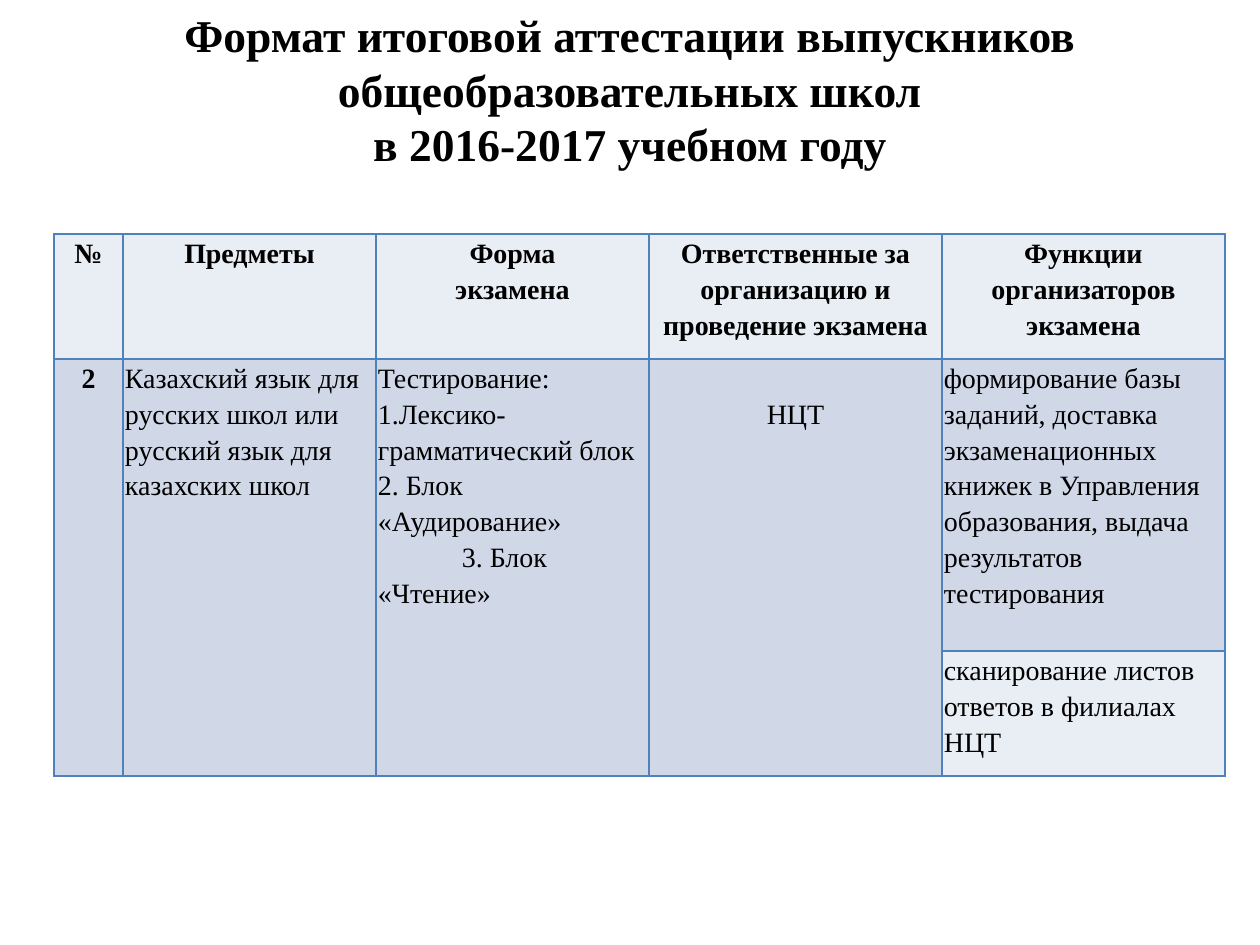
from pptx import Presentation
from pptx.dml.color import RGBColor
from pptx.enum.text import MSO_ANCHOR, PP_ALIGN
from pptx.oxml import parse_xml
from pptx.oxml.ns import nsdecls
from pptx.util import Pt

PX = 914400 / 126
TITLE_ONLY = 5
LEFT, CENTER = PP_ALIGN.LEFT, PP_ALIGN.CENTER
MIDDLE = MSO_ANCHOR.MIDDLE
HEADER_FILL, SUBJECT_FILL = "E9EDF4", "D0D8E8"


def px(length):
    return round(length * PX)


def rgb(value):
    return RGBColor.from_string(value)


def apply(target, values):
    for name, value in values.items():
        setattr(target, name, value)


class SlideBuilder:
    font = "Times New Roman"
    ink = "000000"
    border = "4F81BD"
    cell_size = 16

    def __init__(self, presentation):
        self.slide = presentation.slides.add_slide(
            presentation.slide_layouts[TITLE_ONLY])

    def style_font(self, font, size, bold):
        apply(font, {"name": self.font, "size": Pt(size), "bold": bold})
        font.color.rgb = rgb(self.ink)

    def title(self, text, left, top, width, height, size, margin_bottom):
        heading = self.slide.shapes.title
        apply(heading, {"left": px(left), "top": px(top),
                        "width": px(width), "height": px(height)})
        frame = heading.text_frame
        apply(frame, {"text": text, "word_wrap": True, "vertical_anchor": MIDDLE,
                      "margin_bottom": px(margin_bottom)})
        paragraph = frame.paragraphs[0]
        paragraph.alignment = CENTER
        for run in paragraph.runs:
            self.style_font(run.font, size, True)

    def table(self, left, top, widths, heights):
        table = self.slide.shapes.add_table(
            len(heights), len(widths), px(left), px(top),
            px(sum(widths)), px(sum(heights))).table
        apply(table, {"first_row": False, "horz_banding": False})
        for column, width in zip(table.columns, widths):
            column.width = px(width)
        for row, height in zip(table.rows, heights):
            row.height = px(height)
        for cell in table.iter_cells():
            self.outline(cell)
        return table

    def outline(self, cell):
        properties = cell._tc.get_or_add_tcPr()
        for side in ("lnL", "lnR", "lnT", "lnB"):
            properties.append(parse_xml(
                f'<a:{side} {nsdecls("a")} w="{Pt(1)}"><a:solidFill>'
                f'<a:srgbClr val="{self.border}"/></a:solidFill></a:{side}>'))

    def cell(self, cell, text, fill, align=LEFT, bold=False, margin_top=0):
        cell.fill.solid()
        cell.fill.fore_color.rgb = rgb(fill)
        apply(cell, {"margin_left": px(2), "margin_right": px(2),
                     "margin_top": px(margin_top), "margin_bottom": 0})
        cell.text_frame.text = text
        for paragraph in cell.text_frame.paragraphs:
            apply(paragraph, {"alignment": align, "line_spacing": 1.15})
            for run in paragraph.runs:
                self.style_font(run.font, self.cell_size, bold)

    def indent_first_line(self, paragraph, length):
        paragraph._p.get_or_add_pPr().set("indent", str(px(length)))


HEADERS = ["№", "Предметы", "Форма\nэкзамена",
           "Ответственные за организацию и проведение экзамена",
           "Функции организаторов экзамена"]
# Text and format of each cell in the subject row
SUBJECT_ROW = [
    ("2", {"align": CENTER, "bold": True}),
    ("Казахский язык для русских школ или русский язык для казахских школ", {}),
    ("Тестирование:\n1.Лексико-грамматический блок\n"
     "2. Блок «Аудирование»\n3. Блок «Чтение»", {}),
    ("НЦТ", {"align": CENTER, "margin_top": 36}),
    ("формирование базы заданий, доставка экзаменационных книжек в Управления "
     "образования, выдача результатов тестирования", {}),
]
SCANNING = "сканирование листов ответов в филиалах НЦТ"


def main():
    presentation = Presentation()
    apply(presentation, {"slide_width": px(1260), "slide_height": px(945)})
    builder = SlideBuilder(presentation)
    builder.title("Формат итоговой аттестации выпускников общеобразовательных школ\v"
                  "в 2016-2017 учебном году",
                  63, 38, 1134, 157, size=26, margin_bottom=61)

    exams = builder.table(54, 234, [69, 253, 273, 293, 283], [125, 292, 125])
    for column, header in enumerate(HEADERS):
        builder.cell(exams.cell(0, column), header, HEADER_FILL, CENTER, True)
    functions_column = len(HEADERS) - 1
    for column, (text, style) in enumerate(SUBJECT_ROW):
        subject_cell = exams.cell(1, column)
        if column < functions_column:
            subject_cell.merge(exams.cell(2, column))
        builder.cell(subject_cell, text, SUBJECT_FILL, **style)
    builder.cell(exams.cell(2, functions_column), SCANNING, HEADER_FILL)
    reading_block = exams.cell(1, 2).text_frame.paragraphs[-1]
    builder.indent_first_line(reading_block, 84)

    presentation.save("out.pptx")


if __name__ == "__main__":
    main()
